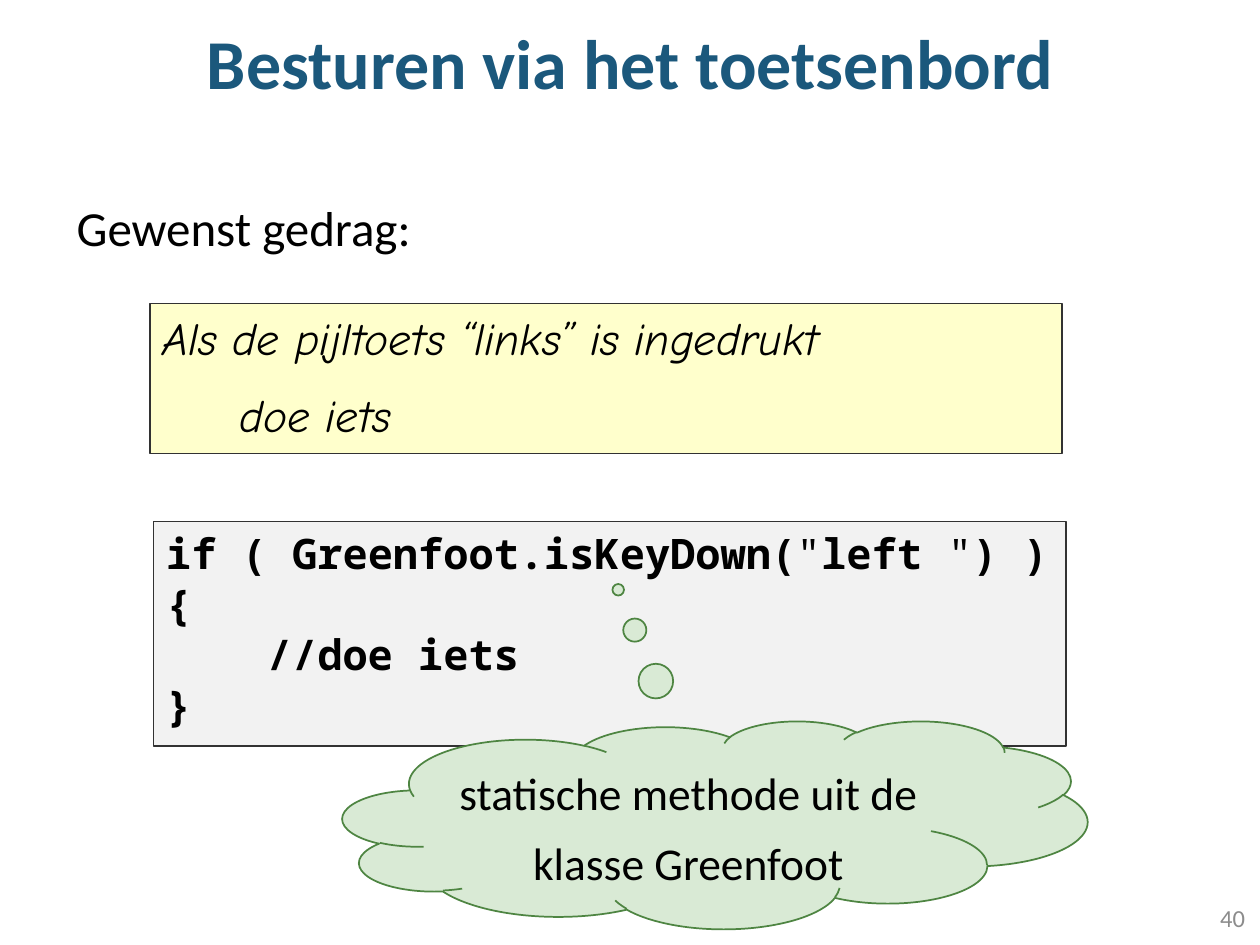
from pptx import Presentation
from pptx.dml.color import RGBColor
from pptx.enum.shapes import MSO_SHAPE as Shape
from pptx.enum.text import MSO_ANCHOR as Anchor, MSO_AUTO_SIZE as AutoSize, PP_ALIGN as Align
from pptx.util import Inches, Pt

BLUE = RGBColor(0x1B, 0x58, 0x7C)
BLACK = RGBColor(0, 0, 0)
GRAY = RGBColor(0x8C, 0x8C, 0x8C)
DARK = RGBColor(0x32, 0x32, 0x32)
YELLOW = RGBColor(0xFF, 0xFF, 0xCC)
PALE_GRAY = RGBColor(0xF2, 0xF2, 0xF2)
PALE_GREEN = RGBColor(0xD9, 0xEA, 0xD5)
GREEN = RGBColor(0x4E, 0x85, 0x42)

TITLE = "Besturen via het toetsenbord"
INTRO = "Gewenst gedrag:"
PAGE = "40"
BEHAVIOUR = [(0, ["Als de pijltoets “links” is ingedrukt"]), (0.61, ["doe iets"])]
CODE = [
    (0, ["if ( Greenfoot.isKeyDown(", '"', "left ", '"', ") )"]),
    (0, ["{"]),
    (0.8, ["//doe iets"]),
    (0, ["}"]),
]
REMARK = [(0, ["statische methode uit de klasse Greenfoot"])]


def place(shape, box):
    shape.left, shape.top, shape.width, shape.height = map(Inches, box)


def write(shape, lines, font, size, color=BLACK, bold=False, italic=False,
          align=Align.LEFT, anchor=Anchor.TOP, spacing=None, gap=0):
    frame = shape.text_frame
    frame.word_wrap = True
    frame.auto_size = AutoSize.NONE
    frame.vertical_anchor = anchor
    for number, (indent, pieces) in enumerate(lines):
        line = frame.add_paragraph() if number else frame.paragraphs[0]
        line.alignment = align
        line.line_spacing = spacing
        line.space_before = Pt(gap if number else 0)
        line.font.name, line.font.size = font, Pt(size)
        line.font.color.rgb = color
        line.font.bold, line.font.italic = bold, italic
        if indent:
            line._p.get_or_add_pPr().set("marL", str(Inches(indent)))
        for piece in pieces:
            run = line.add_run()
            run.text = piece
            if piece == '"':
                run.font.bold = False


def panel(kind, box, fill, outline, width):
    shape = slide.shapes.add_shape(kind, *map(Inches, box))
    shape.shadow.inherit = False
    shape.fill.solid()
    shape.fill.fore_color.rgb = fill
    shape.line.color.rgb = outline
    shape.line.width = Pt(width)
    return shape


deck = Presentation()
deck.slide_width, deck.slide_height = Inches(10), Inches(7.5)
slide = deck.slides.add_slide(deck.slide_layouts[5])

title = slide.shapes.title
place(title, (0, 0, 10, 1.06))
write(title, [(0, [TITLE])], "Calibri", 40, BLUE, bold=True,
      align=Align.CENTER, anchor=Anchor.MIDDLE, spacing=0.9)

intro = slide.shapes.add_textbox(*map(Inches, (0.51, 1.57, 8.35, 5.2)))
write(intro, [(0, [INTRO])], "Calibri", 28, spacing=0.9)

page = slide.shapes.add_textbox(*map(Inches, (7.73, 7.08, 2.25, 0.4)))
write(page, [(0, [PAGE])], "Calibri", 14, GRAY, align=Align.RIGHT, anchor=Anchor.MIDDLE)

behaviour = panel(Shape.RECTANGLE, (1.19, 2.41, 7.24, 1.19), YELLOW, DARK, 0.75)
write(behaviour, BEHAVIOUR, "Comic Neue", 26, italic=True, gap=13)

code = panel(Shape.RECTANGLE, (1.22, 4.14, 7.24, 1.78), PALE_GRAY, DARK, 0.75)
write(code, CODE, "Noto Sans Mono", 24, bold=True)

remark = panel(Shape.CLOUD_CALLOUT, (2.72, 5.72, 5.91, 1.65), PALE_GREEN, GREEN, 1)
remark.adjustments[0], remark.adjustments[1] = -0.13, -1.13
write(remark, REMARK, "Calibri", 26, align=Align.CENTER, anchor=Anchor.MIDDLE, spacing=Pt(40))

deck.save("out.pptx")
